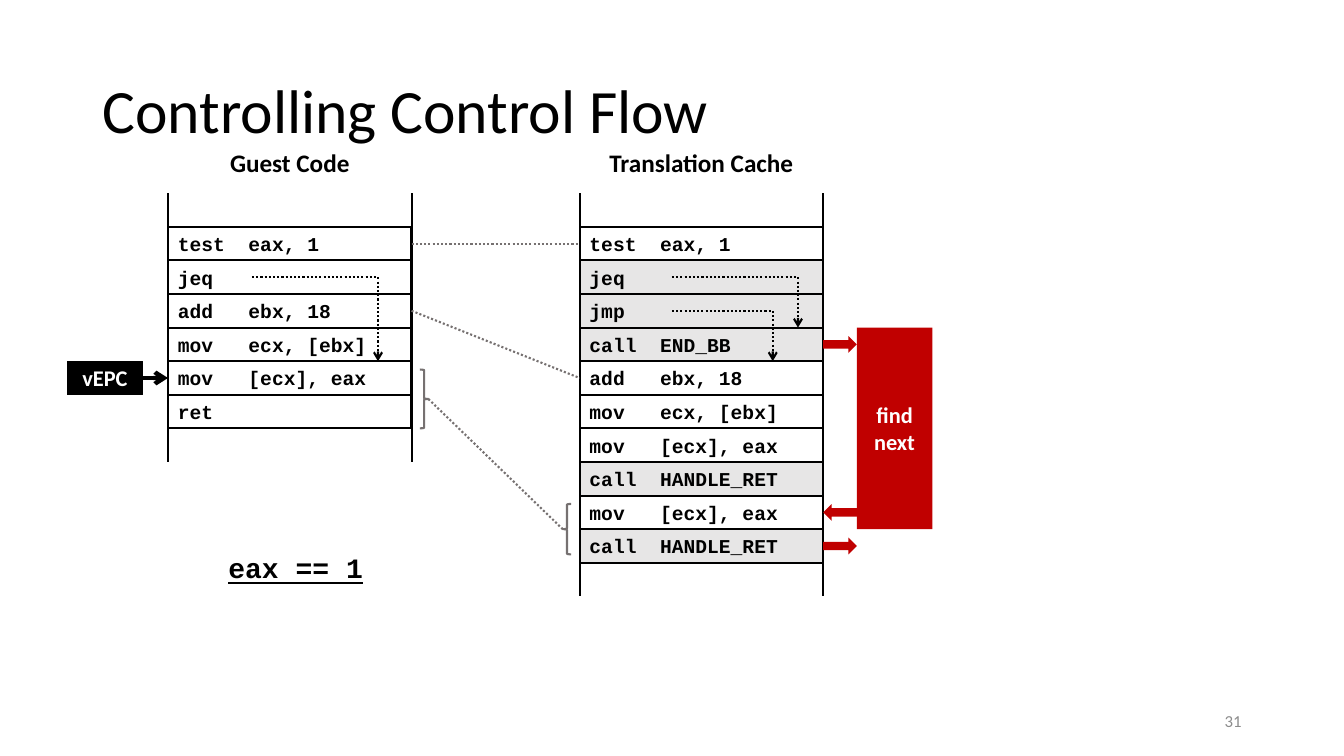
from lxml import etree
from pptx import Presentation
from pptx.dml.color import RGBColor
from pptx.enum.dml import MSO_LINE
from pptx.enum.shapes import MSO_CONNECTOR, MSO_SHAPE
from pptx.enum.text import MSO_ANCHOR, MSO_AUTO_SIZE, PP_ALIGN
from pptx.oxml.ns import qn
from pptx.util import Inches, Pt

RECT, LEFT_BRACE, RIGHT_BRACE = MSO_SHAPE.RECTANGLE, MSO_SHAPE.LEFT_BRACE, MSO_SHAPE.RIGHT_BRACE
LEFT_ARROW, RIGHT_ARROW = MSO_SHAPE.LEFT_ARROW, MSO_SHAPE.RIGHT_ARROW
STRAIGHT, ELBOW = MSO_CONNECTOR.STRAIGHT, MSO_CONNECTOR.ELBOW
DOTTED = MSO_LINE.ROUND_DOT
LEFT, CENTER, RIGHT = PP_ALIGN.LEFT, PP_ALIGN.CENTER, PP_ALIGN.RIGHT
TOP, MIDDLE = MSO_ANCHOR.TOP, MSO_ANCHOR.MIDDLE
NO_AUTOFIT = MSO_AUTO_SIZE.NONE

COLORS = {"black": "000000", "white": "FFFFFF", "shade": "E7E6E6",
          "gray": "767171", "number": "8C8C8C", "red": "C00000"}
SANS, MONO = "Calibri", "Courier New"

UNIT = Inches(1) / 12
COLS, ROWS = 160, 90
GUEST_X, CACHE_X, CODE_W = 20, 69, 29
GUEST_RIGHT, CACHE_RIGHT = GUEST_X + CODE_W, CACHE_X + CODE_W
CODE_Y, ROW_H = 27, 4

GUEST_CODE = [("test", "eax, 1", "white"), ("jeq", "", "white"),
              ("add", "ebx, 18", "white"), ("mov", "ecx, [ebx]", "white"),
              ("mov", "[ecx], eax", "white"), ("ret", "", "white")]
CACHE_CODE = [("test", "eax, 1", "white"), ("jeq", "", "shade"),
              ("jmp", "", "shade"), ("call", "END_BB", "shade"),
              ("add", "ebx, 18", "white"), ("mov", "ecx, [ebx]", "white"),
              ("mov", "[ecx], eax", "white"), ("call", "HANDLE_RET", "shade"),
              ("mov", "[ecx], eax", "white"), ("call", "HANDLE_RET", "shade")]


def grid(*values):
    return [round(v * UNIT) for v in values]


def rgb(name):
    return RGBColor.from_string(COLORS[name])


def row_top(row):
    return CODE_Y + row * ROW_H


def row_middle(row):
    return row_top(row) + ROW_H / 2


def write(s, text, size, color="black", font=SANS, bold=True, underline=None,
          align=LEFT, anchor=MIDDLE):
    tf = s.text_frame
    tf.text = text
    tf.vertical_anchor = anchor
    for p in tf.paragraphs:
        p.alignment = align
        for r in p.runs:
            r.font.name, r.font.size = font, Pt(size)
            r.font.bold, r.font.underline = bold, underline
            r.font.color.rgb = rgb(color)


def add_title(slide, text):
    s = slide.shapes.title
    s.left, s.top, s.width, s.height = grid(11, 4.8, 138, 17.4)
    write(s, text, 44, bold=False)
    s.text_frame.auto_size = NO_AUTOFIT
    s.text_frame.paragraphs[0].line_spacing = 0.9


def add_label(slide, text, box, size, wrap=False, **style):
    s = slide.shapes.add_textbox(*grid(*box))
    s.text_frame.word_wrap = wrap
    write(s, text, size, **style)


def add_box(slide, kind, box, fill=None, line=None, width=1.5):
    s = slide.shapes.add_shape(kind, *grid(*box))
    s.shadow.inherit = False
    if fill:
        s.fill.solid()
        s.fill.fore_color.rgb = rgb(fill)
    else:
        s.fill.background()
    if line:
        s.line.color.rgb = rgb(line)
        s.line.width = Pt(width)
    else:
        s.line.fill.background()
    return s


def add_line(slide, start, end, color="black", width=1.5, dash=None,
             arrow=False, kind=STRAIGHT):
    c = slide.shapes.add_connector(kind, *grid(*start, *end))
    c.line.color.rgb = rgb(color)
    c.line.width = Pt(width)
    if dash:
        c.line.dash_style = dash
    sp_pr = c._element.spPr
    if arrow:
        etree.SubElement(sp_pr.find(qn("a:ln")), qn("a:tailEnd"), type="arrow")
    etree.SubElement(sp_pr, qn("a:effectLst"))
    return c


def add_jump(slide, start, end):
    c = add_line(slide, start, end, dash=DOTTED, arrow=True, kind=ELBOW)
    geom = c._element.spPr.find(qn("a:prstGeom"))
    guides = geom.find(qn("a:avLst"))
    if guides is None:
        guides = etree.SubElement(geom, qn("a:avLst"))
    etree.SubElement(guides, qn("a:gd"), name="adj1", fmla="val 100000")


def add_code(slide, heading, heading_w, x, code):
    heading_x = x + (CODE_W - heading_w) / 2
    add_label(slide, heading, (heading_x, 17, heading_w, 4.8), 18, align=CENTER, anchor=TOP)
    for row, (op, args, fill) in enumerate(code):
        s = add_box(slide, RECT, (x, row_top(row), CODE_W, ROW_H), fill, "black")
        write(s, f"{op:<6}{args}".rstrip(), 14, font=MONO)
    for rail_x in (x, x + CODE_W):
        add_line(slide, (rail_x, row_top(-1)), (rail_x, row_top(len(code) + 1)))


def main():
    prs = Presentation()
    prs.slide_width, prs.slide_height = grid(COLS, ROWS)
    slide = prs.slides.add_slide(prs.slide_layouts[5])
    add_title(slide, "Controlling Control Flow")
    add_label(slide, "31", (113, 83.4, 36, 4.8), 12, wrap=True, color="number",
              bold=False, align=RIGHT)

    add_line(slide, (17, 45), (GUEST_X, 45), width=3, arrow=True)
    s = add_box(slide, RECT, (8, row_top(4), 9, ROW_H), "black", "black", 0.75)
    write(s, "vEPC", 16, "white", align=CENTER)

    add_code(slide, "Guest Code", 16.8, GUEST_X, GUEST_CODE)
    add_code(slide, "Translation Cache", 24.5, CACHE_X, CACHE_CODE)
    add_label(slide, "eax == 1", (26, 65, 18.6, 5.3), 20, font=MONO, underline=True, anchor=TOP)

    add_jump(slide, (30, 33), (45, row_top(4)))
    add_jump(slide, (80, 33), (95, row_top(3)))
    add_jump(slide, (80, 37), (92, row_top(4)))

    add_box(slide, RIGHT_BRACE, (50, 44, 1, 7), line="gray")
    add_box(slide, LEFT_BRACE, (67, 60, 1, 6), line="gray")
    for start, end in (((GUEST_RIGHT, row_middle(0)), (CACHE_X, row_middle(0))),
                       ((GUEST_RIGHT, row_middle(2)), (CACHE_X, row_middle(4))),
                       ((51, 47.5), (67, 63))):
        add_line(slide, start, end, "gray", dash=DOTTED)

    s = add_box(slide, RECT, (102, row_top(3), 9, 6 * ROW_H), "red")
    write(s, "find\nnext", 16, "white", align=CENTER)
    for kind, row in ((RIGHT_ARROW, 3), (LEFT_ARROW, 8), (RIGHT_ARROW, 9)):
        add_box(slide, kind, (CACHE_RIGHT, row_middle(row) - 1, 4, 2), "red")

    prs.save("out.pptx")


if __name__ == "__main__":
    main()
